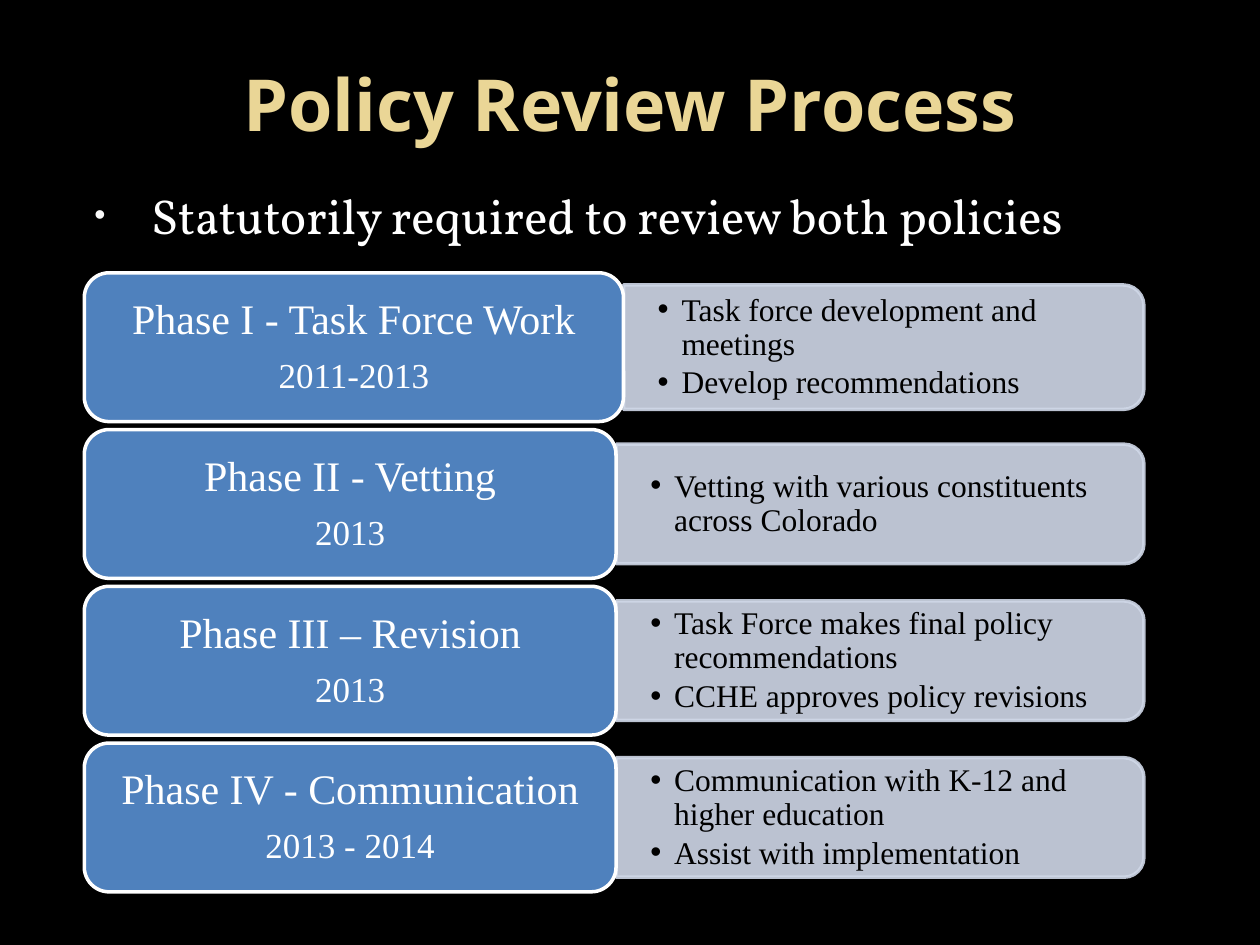
from dataclasses import dataclass

from lxml import etree
from pptx import Presentation
from pptx import util as u
from pptx.dml.color import RGBColor
from pptx.enum import shapes, text
from pptx.oxml.ns import qn


@dataclass(frozen=True)
class Theme:
    background: str = "000000"
    title: str = "EAD696"
    white: str = "FFFFFF"
    black: str = "000000"
    body_bullet: str = "F9F9F9"
    phase: str = "4F81BD"
    panel: str = "D0D8E8"
    panel_opacity: int = 90
    title_font: str = "Noto Sans"
    body_font: str = "Vollkorn"
    diagram_font: str = "Times New Roman"
    title_size: int = 41
    body_size: int = 28
    phase_size: int = 24
    date_size: int = 20
    detail_size: int = 18
    outline: int = 2


@dataclass(frozen=True)
class Phase:
    name: str
    dates: str
    details: tuple[str, ...]
    width: float = 10.72
    panel_height: float = 2.41


THEME = Theme()
PHASES = (
    Phase("Phase I - Task Force Work", "2011-2013",
          ("Task force development and meetings", "Develop recommendations"),
          width=10.87, panel_height=2.51),
    Phase("Phase II - Vetting", "2013",
          ("Vetting with various constituents across Colorado",)),
    Phase("Phase III – Revision", "2013",
          ("Task Force makes final policy recommendations",
           "CCHE approves policy revisions")),
    Phase("Phase IV - Communication", "2013 - 2014",
          ("Communication with K-12 and higher education",
           "Assist with implementation")),
)

# Diagram grid, in centimetres
LEFT, TOP, RIGHT = 1.7, 5.5, 23.06
BOX_HEIGHT, ROW_PITCH = 3.0, 3.16


def place(shape, left: float, top: float, width: float, height: float) -> None:
    shape.left, shape.top = u.Cm(left), u.Cm(top)
    shape.width, shape.height = u.Cm(width), u.Cm(height)


def style_runs(paragraph, font: str, size: int, color: str, bold: bool = False) -> None:
    for run in paragraph.runs:
        run.font.name, run.font.size, run.font.bold = font, u.Pt(size), bold
        run.font.color.rgb = RGBColor.from_string(color)


def set_bullet(paragraph, margin: float, indent: float, color: str, percent: int = 100) -> None:
    properties = paragraph._p.get_or_add_pPr()
    properties.set("marL", str(u.Cm(margin)))
    properties.set("indent", str(u.Cm(indent)))
    bullet_color = etree.SubElement(properties, qn("a:buClr"))
    etree.SubElement(bullet_color, qn("a:srgbClr"), val=color)
    etree.SubElement(properties, qn("a:buSzPct"), val=str(percent * 1000))
    etree.SubElement(properties, qn("a:buFont"), typeface="Arial")
    etree.SubElement(properties, qn("a:buChar"), char="•")


def set_opacity(shape, percent: int) -> None:
    for color in shape._element.spPr.iter(qn("a:srgbClr")):
        etree.SubElement(color, qn("a:alpha"), val=str(percent * 1000))


def add_block(slide, kind, bounds: tuple[float, ...], fill: str, line: str):
    shape = slide.shapes.add_shape(kind, *map(u.Cm, bounds))
    shape.shadow.inherit = False
    shape.fill.solid()
    shape.fill.fore_color.rgb = RGBColor.from_string(fill)
    shape.line.color.rgb = RGBColor.from_string(line)
    shape.line.width = u.Pt(THEME.outline)
    return shape


def add_panel(slide, phase: Phase, middle: float) -> None:
    left, height = LEFT + phase.width, phase.panel_height
    width = RIGHT - left
    # The preset rounds its top corners, so a quarter turn puts them on the right
    bounds = ((left + RIGHT - height) / 2, middle - width / 2, height, width)
    panel = add_block(slide, shapes.MSO_SHAPE.ROUND_2_SAME_RECTANGLE, bounds,
                      THEME.panel, THEME.panel)
    panel.rotation = 90
    set_opacity(panel, THEME.panel_opacity)

    text_height = height - 0.24
    box = slide.shapes.add_textbox(u.Cm(left), u.Cm(middle - text_height / 2),
                                   u.Cm(width - 0.12), u.Cm(text_height))
    frame = box.text_frame
    frame.word_wrap = True
    frame.vertical_anchor = text.MSO_ANCHOR.MIDDLE
    frame.margin_left = frame.margin_right = u.Cm(0.69)
    frame.margin_top = frame.margin_bottom = u.Cm(0.35)
    frame.text = "\n".join(phase.details)
    for paragraph in frame.paragraphs:
        paragraph.level = 1
        paragraph.line_spacing = 0.9
        paragraph.space_after = u.Pt(THEME.detail_size * 0.15)
        set_bullet(paragraph, 0.48, -0.48, THEME.black)
        style_runs(paragraph, THEME.diagram_font, THEME.detail_size, THEME.black)


def add_phase_box(slide, phase: Phase, top: float) -> None:
    box = add_block(slide, shapes.MSO_SHAPE.ROUNDED_RECTANGLE,
                    (LEFT, top, phase.width, BOX_HEIGHT), THEME.phase, THEME.white)
    frame = box.text_frame
    frame.word_wrap = True
    frame.vertical_anchor = text.MSO_ANCHOR.MIDDLE
    frame.text = f"{phase.name}\n{phase.dates}"
    for paragraph, size in zip(frame.paragraphs, (THEME.phase_size, THEME.date_size)):
        paragraph.alignment = text.PP_ALIGN.CENTER
        paragraph.line_spacing = 0.9
        paragraph.space_after = u.Pt(size * 0.35)
        style_runs(paragraph, THEME.diagram_font, size, THEME.white)


def fill_placeholders(slide) -> None:
    title, body = slide.shapes.title, slide.placeholders[1]
    place(title, 1.27, 0.76, 22.86, 2.62)
    title.text_frame.text = "Policy Review Process"
    title.text_frame.vertical_anchor = text.MSO_ANCHOR.MIDDLE
    heading = title.text_frame.paragraphs[0]
    heading.alignment = text.PP_ALIGN.CENTER
    style_runs(heading, THEME.title_font, THEME.title_size, THEME.title, bold=True)

    place(body, 1.27, 3.61, 22.86, 13.26)
    body.text_frame.text = "Statutorily required to review both policies"
    statement = body.text_frame.paragraphs[0]
    statement.space_before = u.Pt(THEME.body_size * 0.2)
    set_bullet(statement, 1.52, -1.14, THEME.body_bullet, percent=65)
    style_runs(statement, THEME.body_font, THEME.body_size, THEME.white)
    for placeholder in (title, body):
        placeholder.text_frame.auto_size = text.MSO_AUTO_SIZE.NONE


def main() -> None:
    presentation = Presentation()
    presentation.slide_width, presentation.slide_height = u.Cm(25.4), u.Cm(19.05)
    slide = presentation.slides.add_slide(presentation.slide_layouts[1])
    slide.background.fill.solid()
    slide.background.fill.fore_color.rgb = RGBColor.from_string(THEME.background)

    # Title and statement
    fill_placeholders(slide)

    # One row per phase: detail panel behind, phase box in front
    for row, phase in enumerate(PHASES):
        top = TOP + row * ROW_PITCH
        add_panel(slide, phase, top + BOX_HEIGHT / 2)
        add_phase_box(slide, phase, top)

    presentation.save("out.pptx")


if __name__ == "__main__":
    main()
